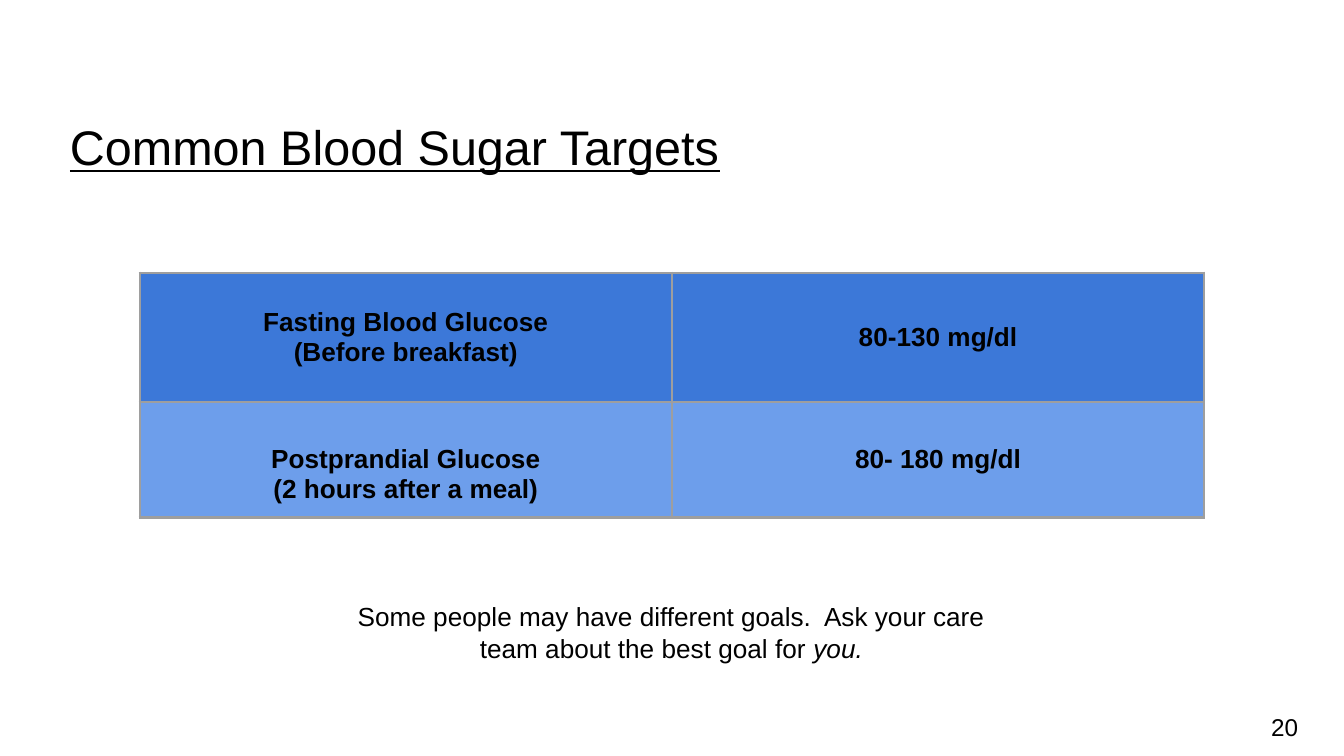
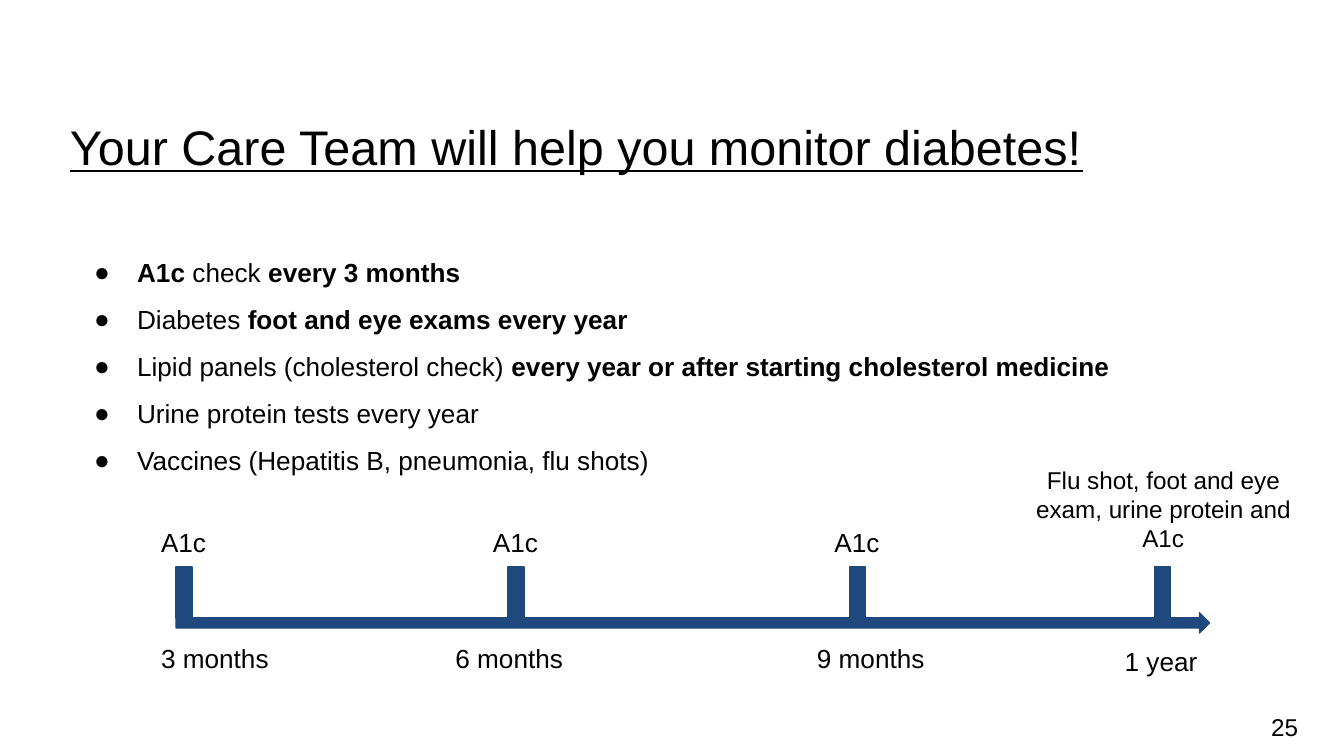
"""Build two slides on blood sugar targets and diabetes monitoring."""
from lxml.etree import SubElement
from pptx import Presentation
from pptx.dml.color import RGBColor
from pptx.enum.shapes import MSO_SHAPE
from pptx.enum.text import MSO_ANCHOR, MSO_AUTO_SIZE, PP_ALIGN
from pptx.oxml.ns import qn
from pptx.util import Inches, Pt

WIDTH, HEIGHT = Inches(10), Inches(5.625)
UNIT = WIDTH / 100
FONT = "Arial"
BLACK = RGBColor(0x00, 0x00, 0x00)
NAVY = RGBColor(0x1F, 0x49, 0x7D)
DEEP = RGBColor(0x3C, 0x78, 0xD8)
LIGHT = RGBColor(0x6D, 0x9E, 0xEB)
GREY = RGBColor(0x9E, 0x9E, 0x9E)

TITLE = (4.2, 6.2, 91.7, 9.4)
NUMBER = (93.6, 51.9, 6, 4.3)
TARGETS = [
    (DEEP, 9.6, ["Fasting Blood Glucose\n(Before breakfast)", "80-130 mg/dl"]),
    (LIGHT, 8.6, ["Postprandial Glucose\n(2 hours after a meal)", "80- 180 mg/dl"]),
]
CHECKS = [
    [("A1c", "b"), (" check ", ""), ("every 3 months", "b")],
    [("Diabetes ", ""), ("foot and eye exams every year", "b")],
    [("Lipid panels (cholesterol check) ", ""),
     ("every year or after starting cholesterol medicine", "b")],
    [("Urine protein tests every year", "")],
    [("Vaccines (Hepatitis B, pneumonia, flu shots)", "")],
]
POSTS = [
    (13.1, "3 months", (11, 46.8, 11.6, 4.4)),
    (37.8, "6 months", (32.9, 46.8, 11.6, 4.4)),
    (63.2, "9 months", (59.8, 46.8, 11.6, 4.4)),
    (85.9, "1 year", (82.7, 47, 16, 4.4)),
]


def grid(*sizes):
    """Turn grid columns and rows into slide lengths."""
    return [round(size * UNIT) for size in sizes]


def style(font, size, bold=False, italic=False):
    """Set the shared font with its size and emphasis."""
    font.name, font.size, font.color.rgb = FONT, Pt(size), BLACK
    font.bold, font.italic = bold, italic


def frame(shape, anchor=MSO_ANCHOR.TOP):
    """Set wrapping, anchor and insets of a shape's text."""
    text = shape.text_frame
    text.word_wrap, text.auto_size = True, MSO_AUTO_SIZE.NONE
    text.vertical_anchor = anchor
    text.margin_left = text.margin_right = text.margin_top = text.margin_bottom = Inches(0.1)
    return text


def move(shape, box):
    """Place a shape on the grid."""
    shape.left, shape.top, shape.width, shape.height = grid(*box)


def fill_runs(para, pieces, size):
    """Write (text, emphasis) pieces into a paragraph."""
    for words, mark in pieces:
        run = para.add_run()
        run.text = words
        style(run.font, size, "b" in mark, "i" in mark)


def label(slide, box, pieces, size=14, align=PP_ALIGN.LEFT, anchor=MSO_ANCHOR.TOP):
    """Add a one-paragraph text box."""
    para = frame(slide.shapes.add_textbox(*grid(*box)), anchor).paragraphs[0]
    para.alignment = align
    fill_runs(para, pieces, size)


def start(deck, layout, title, number):
    """Add a slide with its underlined title and page number."""
    slide = deck.slides.add_slide(deck.slide_layouts[layout])
    head = slide.shapes.title
    move(head, TITLE)
    text = frame(head, MSO_ANCHOR.MIDDLE)
    text.text = title
    para = text.paragraphs[0]
    para.alignment = PP_ALIGN.LEFT
    style(para.runs[0].font, 26)
    para.runs[0].font.underline = True
    label(slide, NUMBER, [(number, "")], 13, anchor=MSO_ANCHOR.MIDDLE)
    return slide


def border(cell):
    """Draw grey lines on all sides of a cell."""
    props = cell._tc.get_or_add_tcPr()
    for side in ("a:lnL", "a:lnR", "a:lnT", "a:lnB"):
        line = SubElement(props, qn(side), w=str(Pt(1.5)))
        solid = SubElement(line, qn("a:solidFill"))
        SubElement(solid, qn("a:srgbClr"), val=str(GREY))


def fill_cell(cell, words, color):
    """Write bold centred text on a coloured cell."""
    border(cell)
    cell.fill.solid()
    cell.fill.fore_color.rgb = color
    cell.vertical_anchor = MSO_ANCHOR.MIDDLE
    cell.margin_left = cell.margin_right = cell.margin_top = cell.margin_bottom = Inches(0.1)
    cell.text_frame.text = words
    for para in cell.text_frame.paragraphs:
        para.alignment = PP_ALIGN.CENTER
        style(para.runs[0].font, 14, bold=True)


def chart_goals(slide):
    """Add the table of blood sugar targets."""
    high = sum(row[1] for row in TARGETS)
    table = slide.shapes.add_table(len(TARGETS), 2, *grid(10.4, 20.3, 79.2, high)).table
    table.first_row = table.horz_banding = False
    for row, (color, tall, texts) in enumerate(TARGETS):
        table.rows[row].height = grid(tall)[0]
        for col, words in enumerate(texts):
            fill_cell(table.cell(row, col), words, color)
    table.cell(1, 0).margin_top = Inches(0.32)


def list_checks(slide):
    """Fill the body with the bulleted checks."""
    body = slide.placeholders[1]
    move(body, (4.2, 16.9, 90, 34))
    text = frame(body)
    for index, pieces in enumerate(CHECKS):
        para = text.add_paragraph() if index else text.paragraphs[0]
        props = para._p.get_or_add_pPr()
        props.set("marL", str(Inches(0.5)))
        props.set("indent", str(Inches(-0.32)))
        color = SubElement(props, qn("a:buClr"))
        SubElement(color, qn("a:srgbClr"), val=str(BLACK))
        SubElement(props, qn("a:buFont"), typeface=FONT)
        SubElement(props, qn("a:buChar"), char="●")
        para.line_spacing, para.space_before = 1.5, Pt(0)
        fill_runs(para, pieces, 14)


def block(slide, kind, box):
    """Add a navy shape."""
    shape = slide.shapes.add_shape(kind, *grid(*box))
    shape.shadow.inherit = False
    shape.fill.solid()
    shape.fill.fore_color.rgb = shape.line.color.rgb = NAVY
    shape.line.width = Pt(0.75)


def draw_year(slide):
    """Draw the timeline with its posts and labels."""
    block(slide, MSO_SHAPE.RIGHT_ARROW, (13.1, 45.6, 76.9, 1.5))
    for left, when, box in POSTS:
        block(slide, MSO_SHAPE.RECTANGLE, (left, 42.2, 1.2, 3.8))
        label(slide, box, [(when, "")])
    for left, *_ in POSTS[:-1]:
        label(slide, (left - 2.1, 38.2, 5.6, 4.4), [("A1c", "")])
    label(slide, (75.7, 33.6, 21.7, 8.6),
          [("Flu shot, foot and eye exam, urine protein and A1c", "")],
          13, PP_ALIGN.CENTER)


def main():
    """Build and save the deck."""
    deck = Presentation()
    deck.slide_width, deck.slide_height = WIDTH, HEIGHT
    goals = start(deck, 5, "Common Blood Sugar Targets", "20")
    chart_goals(goals)
    label(goals, (23.9, 43.7, 52.1, 9.4),
          [("Some people may have different goals.  Ask your care team "
            "about the best goal for ", ""), ("you.", "i")],
          align=PP_ALIGN.CENTER)
    care = start(deck, 1, "Your Care Team will help you monitor diabetes!", "25")
    list_checks(care)
    draw_year(care)
    deck.save("out.pptx")


if __name__ == "__main__":
    main()
